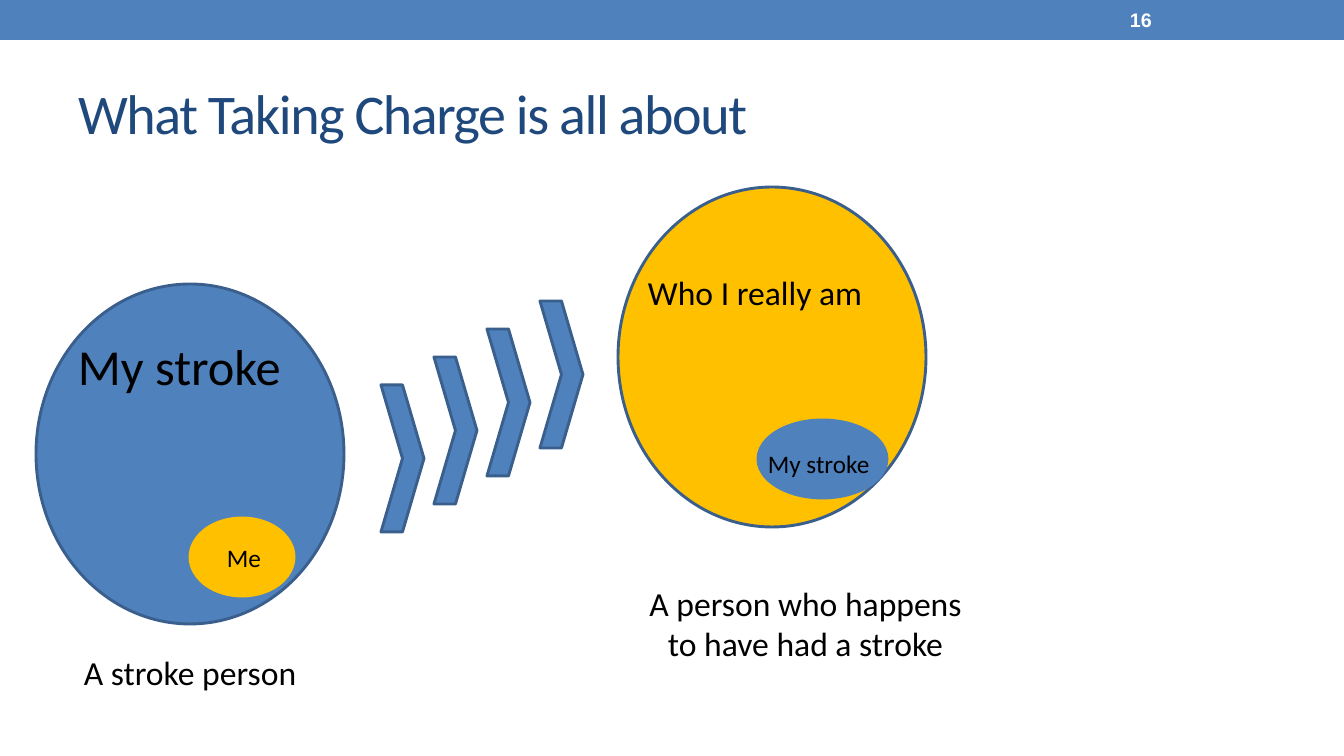
from pptx import Presentation
from pptx.dml.color import RGBColor
from pptx.enum.shapes import MSO_SHAPE
from pptx.enum.text import MSO_ANCHOR, MSO_AUTO_SIZE, PP_ALIGN
from pptx.util import Emu, Pt

SCALE = 914400 / 100.8
BLUE, GOLD, EDGE = "4F81BD", "FFC000", "3A5F8C"
BLACK, NAVY, WHITE = "000000", "1F497D", "FFFFFF"
LEFT, MID = PP_ALIGN.LEFT, PP_ALIGN.CENTER
TOP, CENTER = MSO_ANCHOR.TOP, MSO_ANCHOR.MIDDLE


def px(n):
    return Emu(round(n * SCALE))


def color(code):
    return RGBColor.from_string(code)


def apply(item, values):
    for name, value in values.items():
        setattr(item, name, value)


def inside(box, part):
    return box[0] + part[0], box[1] + part[1], part[2], part[3]


def draw(slide, kind, box, fill, edge=None):
    shape = slide.shapes.add_shape(kind, *map(px, box))
    shape.shadow.inherit = False
    shape.fill.solid()
    shape.fill.fore_color.rgb = color(fill)
    if edge:
        shape.line.color.rgb = color(edge)
        shape.line.width = Pt(2.08)
    else:
        shape.line.fill.background()


def style(shape, text, size, code=BLACK, align=LEFT, anchor=TOP,
          face="Calibri", bold=False):
    frame = shape.text_frame
    apply(frame, {"word_wrap": True, "auto_size": MSO_AUTO_SIZE.NONE,
                  "vertical_anchor": anchor})
    para = frame.paragraphs[0]
    para.alignment = align
    run = para.add_run()
    run.text = text
    apply(run.font, {"name": face, "size": Pt(size), "bold": bold})
    run.font.color.rgb = color(code)
    return run


def write(slide, box, text, size, **look):
    style(slide.shapes.add_textbox(*map(px, box)), text, size, **look)


def header(slide, box):
    draw(slide, MSO_SHAPE.RECTANGLE, box, BLUE)
    write(slide, inside(box, (1120, 2, 157, 36)), "16", 14, code=WHITE,
          anchor=CENTER, face="Arial", bold=True)


def heading(slide, box):
    title = slide.shapes.title
    apply(title, dict(zip(("left", "top", "width", "height"), map(px, box))))
    run = style(title, "What Taking Charge is all about", 40, code=NAVY,
                anchor=CENTER)
    run.font._element.set("spc", "-100")


def person(slide, box, outer, inner, label, core, note):
    draw(slide, MSO_SHAPE.OVAL, box, outer, EDGE)
    draw(slide, MSO_SHAPE.OVAL, inside(box, core[0]), inner, inner)
    write(slide, inside(box, label[0]), *label[1:])
    write(slide, inside(box, core[1]), core[2], 18, align=core[3])
    write(slide, inside(box, note[0]), note[1], 24, align=MID)


def climb(slide, box, count=4):
    left, top, width, height = box
    wide, tall = 43, 147
    for i in range(count):
        part = i / (count - 1)
        spot = (left + (width - wide) * part,
                top + (height - tall) * (1 - part), wide, tall)
        draw(slide, MSO_SHAPE.CHEVRON, spot, BLUE, EDGE)


def main():
    deck = Presentation()
    apply(deck, {"slide_width": px(1344), "slide_height": px(756)})
    slide = deck.slides.add_slide(deck.slide_layouts[5])
    header(slide, (0, 0, 1344, 40))
    heading(slide, (68, 58, 1210, 109))
    person(slide, (36, 284, 308, 340), BLUE, GOLD,
           ((32, 46, 266, 72), "My stroke", 36),
           ((154, 234, 104, 78), (156, 253, 104, 40), "Me", MID),
           ((0, 363, 308, 50), "A stroke person"))
    climb(slide, (381, 301, 202, 231))
    person(slide, (618, 187, 308, 340), GOLD, BLUE,
           ((20, 80, 288, 50), "Who I really am", 24),
           ((140, 233, 129, 78), (140, 256, 145, 40), "My stroke", LEFT),
           ((20, 391, 335, 92), "A person who happens to have had a stroke"))
    deck.save("out.pptx")


if __name__ == "__main__":
    main()
